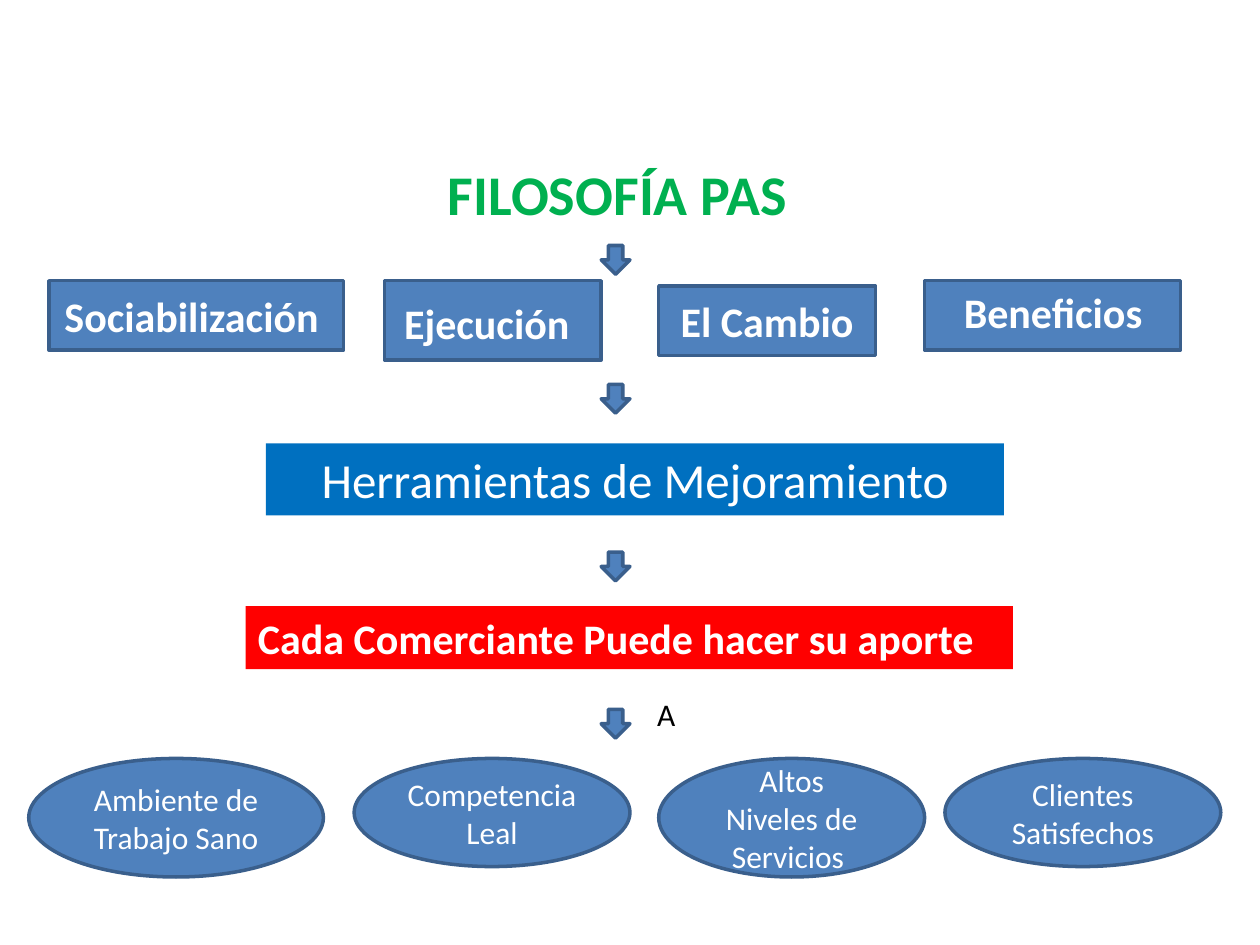
from pptx import Presentation
from pptx.dml.color import RGBColor
from pptx.enum.shapes import MSO_SHAPE as SHAPE
from pptx.enum.text import MSO_ANCHOR as ANCHOR, PP_ALIGN as ALIGN
from pptx.util import Cm, Pt

BLUE = RGBColor(0x4F, 0x81, 0xBD)
EDGE = RGBColor(0x3A, 0x5F, 0x8C)
BAND_BLUE = RGBColor(0x00, 0x70, 0xC0)
RED = RGBColor(0xFF, 0x00, 0x00)
GREEN = RGBColor(0x00, 0xB0, 0x50)
WHITE = RGBColor(0xFF, 0xFF, 0xFF)
BLACK = RGBColor(0x00, 0x00, 0x00)


class Diagram:
    """Holds the style and the current slide."""
    font = "Calibri"

    def __init__(self, slide):
        self.slide = slide

    def set_text(self, sp, text, size, color=WHITE, bold=False,
                 align=ALIGN.CENTER, wrap=True, anchor=ANCHOR.MIDDLE):
        tf = sp.text_frame
        tf.word_wrap = wrap
        tf.vertical_anchor = anchor
        p = tf.paragraphs[0]
        p.text = text
        p.alignment = align
        f = p.font
        f.name, f.size, f.bold = self.font, Pt(size), bold
        f.color.rgb = color

    def title(self, text, box):
        sp = self.slide.shapes.title
        sp.left, sp.top, sp.width, sp.height = map(Cm, box)
        self.set_text(sp, text, 32, GREEN, bold=True, wrap=False)

    def shape(self, kind, box, fill=BLUE, edge=EDGE):
        sp = self.slide.shapes.add_shape(kind, *map(Cm, box))
        sp.shadow.inherit = False
        sp.fill.solid()
        sp.fill.fore_color.rgb = fill
        if edge is None:
            sp.line.fill.background()
        else:
            sp.line.color.rgb = edge
            sp.line.width = Pt(2)
        return sp

    def band(self, text, box, fill, size, **style):
        sp = self.shape(SHAPE.RECTANGLE, box, fill, edge=None)
        self.set_text(sp, text, size, **style)

    def label(self, text, box, size, **style):
        sp = self.slide.shapes.add_textbox(*map(Cm, box))
        self.set_text(sp, text, size, anchor=ANCHOR.TOP, **style)


def main():
    prs = Presentation()
    prs.slide_width, prs.slide_height = Cm(25.4), Cm(19.05)
    d = Diagram(prs.slides.add_slide(prs.slide_layouts[5]))

    d.title("FILOSOFÍA PAS", (8.74, 3.07, 7.42, 1.63))

    # Row of four stages; two carry their text in a separate label
    stages = [("Sociabilización ", (0.99, 5.66, 5.94, 1.4), None),
              ("Ejecución", (7.75, 5.66, 4.37, 1.6), (7.34, 5.87, 4.95, 1.27)),
              ("El Cambio", (13.28, 5.77, 4.37, 1.4), None),
              ("Beneficios", (18.64, 5.66, 5.16, 1.4), (18.26, 5.66, 5.94, 1.27))]
    for text, box, label_box in stages:
        sp = d.shape(SHAPE.RECTANGLE, box)
        if label_box:
            d.label(text, label_box, 24, bold=True)
        else:
            d.set_text(sp, text, 24, bold=True)

    # Wide bands
    d.band("Herramientas de Mejoramiento", (5.36, 8.94, 14.88, 1.45), BAND_BLUE, 28)
    d.band("Cada Comerciante Puede hacer su aporte", (4.95, 12.22, 15.47, 1.27),
           RED, 24, bold=True, align=ALIGN.LEFT)

    # Results
    results = [("Ambiente de Trabajo Sano", 0.58, 5.94, 2.39),
               ("Competencia Leal", 7.14, 5.56, 2.18),
               ("Altos Niveles de Servicios ", 13.28, 5.36, 2.39),
               ("Clientes Satisfechos", 19.05, 5.56, 2.18)]
    for text, left, width, height in results:
        d.set_text(d.shape(SHAPE.OVAL, (left, 15.29, width, height)), text, 18)
    d.label("A", (13, 13.89, 0.89, 1.02), 18, color=BLACK,
            align=ALIGN.LEFT, wrap=False)

    # Arrows between the levels
    for top in (4.95, 7.75, 11.13, 14.3):
        d.shape(SHAPE.DOWN_ARROW, (12.12, top, 0.58, 0.58))

    prs.save("out.pptx")


if __name__ == "__main__":
    main()
